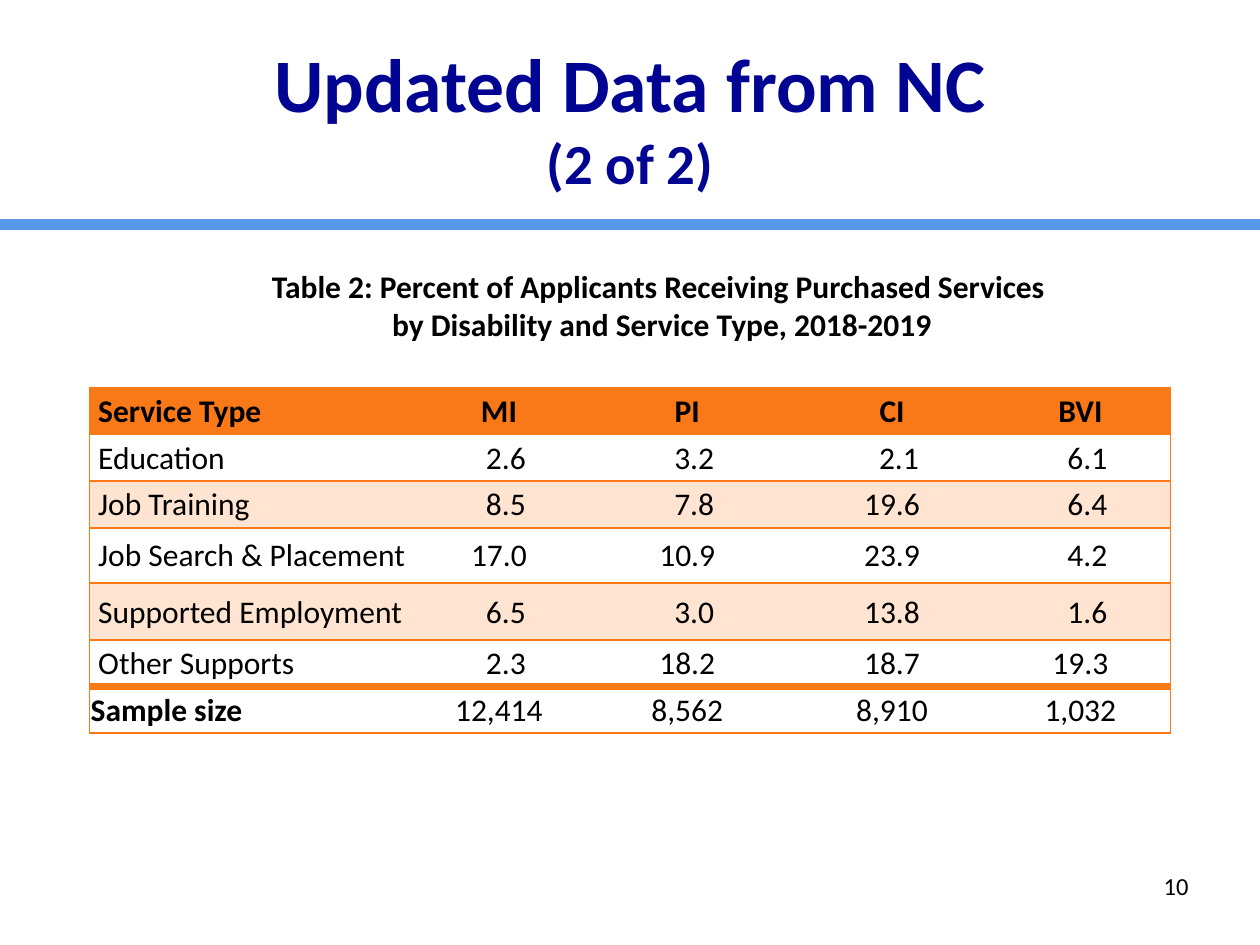
import pptx
import pptx.dml.color
import pptx.enum.shapes
import pptx.enum.text
import pptx.oxml
import pptx.oxml.ns
import pptx.util

Inches = pptx.util.Inches
Pt = pptx.util.Pt
ALIGN = pptx.enum.text.PP_ALIGN
MIDDLE = pptx.enum.text.MSO_ANCHOR.MIDDLE

ORANGE, PEACH, WHITE = "F97817", "FEE4D1", "FFFFFF"
BLACK, NAVY, BLUE = "000000", "020592", "5799E8"

COLS = [2.6, 1.3, 1.69, 1.56, 1.43]
HEIGHTS = [0.37, 0.37, 0.37, 0.44, 0.45, 0.37, 0.37]
ROWS = [
    ["Service Type", "MI", "PI", "CI", "BVI"],
    ["Education", "2.6", "3.2", "2.1", "6.1"],
    ["Job Training", "8.5", "7.8", "19.6", "6.4"],
    ["Job Search & Placement", "17.0", "10.9", "23.9", "4.2"],
    ["Supported Employment", "6.5", "3.0", "13.8", "1.6"],
    ["Other Supports", "2.3", "18.2", "18.7", "19.3"],
    ["Sample size", "12,414", "8,562", "8,910", "1,032"],
]


def color(code):
    return pptx.dml.color.RGBColor.from_string(code)


def add_run(para, text, size, code=BLACK, bold=False):
    run = para.add_run()
    run.text = text
    run.font.name = "Calibri"
    run.font.size = Pt(size)
    run.font.bold = bold
    run.font.color.rgb = color(code)


def add_title(slide):
    title = slide.shapes.title
    title.left, title.top = Inches(0.5), Inches(0.3)
    title.width, title.height = Inches(9), Inches(1.25)
    frame = title.text_frame
    frame.vertical_anchor = MIDDLE
    para = frame.paragraphs[0]
    para.alignment = ALIGN.CENTER
    add_run(para, "Updated Data from NC", 43.2, NAVY, True)
    para.add_line_break()
    add_run(para, "(2 of 2)", 32.4, NAVY, True)


def add_rule(slide, top, code, width):
    line = slide.shapes.add_connector(
        pptx.enum.shapes.MSO_CONNECTOR.STRAIGHT,
        0, Inches(top), Inches(10), Inches(top))
    line.line.color.rgb = color(code)
    line.line.width = Pt(width)
    props = line._element.spPr
    props.append(pptx.oxml.parse_xml(
        f"<a:effectLst {pptx.oxml.ns.nsdecls('a')}/>"))


def add_text(slide, box, lines, size, bold=False):
    shape = slide.shapes.add_textbox(*[Inches(n) for n in box])
    frame = shape.text_frame
    frame.word_wrap = True
    for i, text in enumerate(lines):
        para = frame.add_paragraph() if i else frame.paragraphs[0]
        para.alignment = ALIGN.CENTER
        add_run(para, text, size, bold=bold)
    return frame


def set_edges(cell, widths):
    """Draw left, right, top and bottom borders; a width of 0 hides one."""
    props = cell._tc.get_or_add_tcPr()
    for i, (side, width) in enumerate(zip("LRTB", widths)):
        fill = (f'<a:solidFill><a:srgbClr val="{ORANGE}"/></a:solidFill>'
                if width else "<a:noFill/>")
        props.insert(i, pptx.oxml.parse_xml(
            f"<a:ln{side} {pptx.oxml.ns.nsdecls('a')} "
            f'w="{Pt(width)}">{fill}</a:ln{side}>'))


def inset(row, col, text):
    """Left margin that indents labels and lines up the decimals."""
    if col == 0:
        return 0.01 if row == len(ROWS) - 1 else 0.07
    return 0.12 if row and len(text) == 3 else 0.01


def fill_cell(cell, row, col, text):
    last = len(ROWS) - 1
    cell.fill.solid()
    shade = ORANGE if row == 0 else PEACH if row in (2, 4) else WHITE
    cell.fill.fore_color.rgb = color(shade)
    cell.vertical_anchor = MIDDLE
    cell.margin_left = Inches(inset(row, col, text))
    cell.margin_right = cell.margin_top = Inches(0.01)
    cell.margin_bottom = 0
    para = cell.text_frame.paragraphs[0]
    para.alignment = ALIGN.CENTER if col else ALIGN.LEFT
    add_run(para, text, 18, bold=row == 0 or (row == last and col == 0))
    set_edges(cell, [int(col == 0), int(col == len(COLS) - 1),
                     4 if row == last else 1,
                     4 if row == last - 1 else 1])


def add_grid(slide):
    frame = slide.shapes.add_table(
        len(ROWS), len(COLS), Inches(0.71), Inches(3.08),
        Inches(sum(COLS)), Inches(sum(HEIGHTS)))
    table = frame.table
    table.first_row = table.horz_banding = False
    for col, width in zip(table.columns, COLS):
        col.width = Inches(width)
    for row, height in zip(table.rows, HEIGHTS):
        row.height = Inches(height)
    for r, texts in enumerate(ROWS):
        for c, text in enumerate(texts):
            fill_cell(table.cell(r, c), r, c, text)


def main():
    deck = pptx.Presentation()
    deck.slide_width, deck.slide_height = Inches(10), Inches(7.5)
    slide = deck.slides.add_slide(deck.slide_layouts[5])
    add_rule(slide, 1.78, BLUE, 7)
    add_rule(slide, 1.73, WHITE, 0.5)
    add_title(slide)
    add_text(slide, (2, 2.07, 6.51, 0.71),
             ["Table 2: Percent of Applicants Receiving Purchased Services ",
              "by Disability and Service Type, 2018-2019"], 18, True)
    add_grid(slide)
    page = add_text(slide, (9, 6.83, 0.67, 0.4), ["10"], 14)
    page.vertical_anchor = MIDDLE
    deck.save("out.pptx")


if __name__ == "__main__":
    main()
